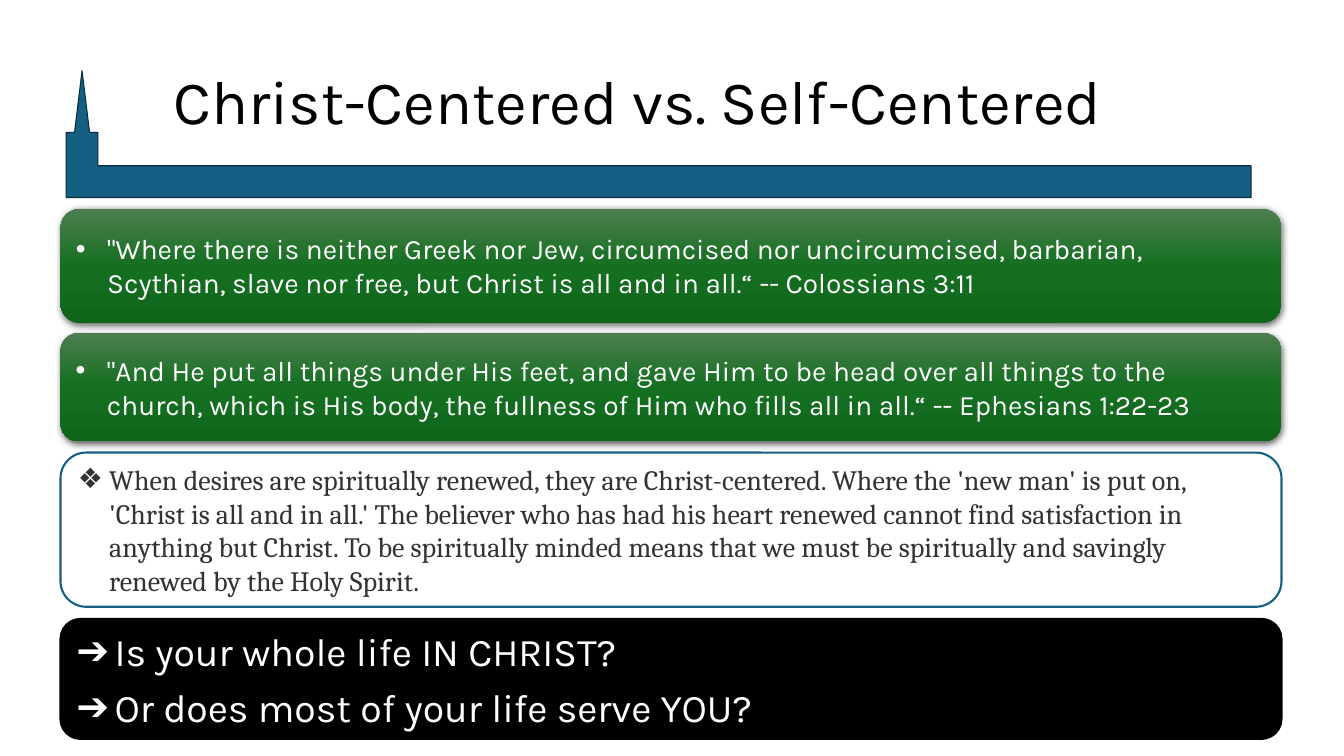
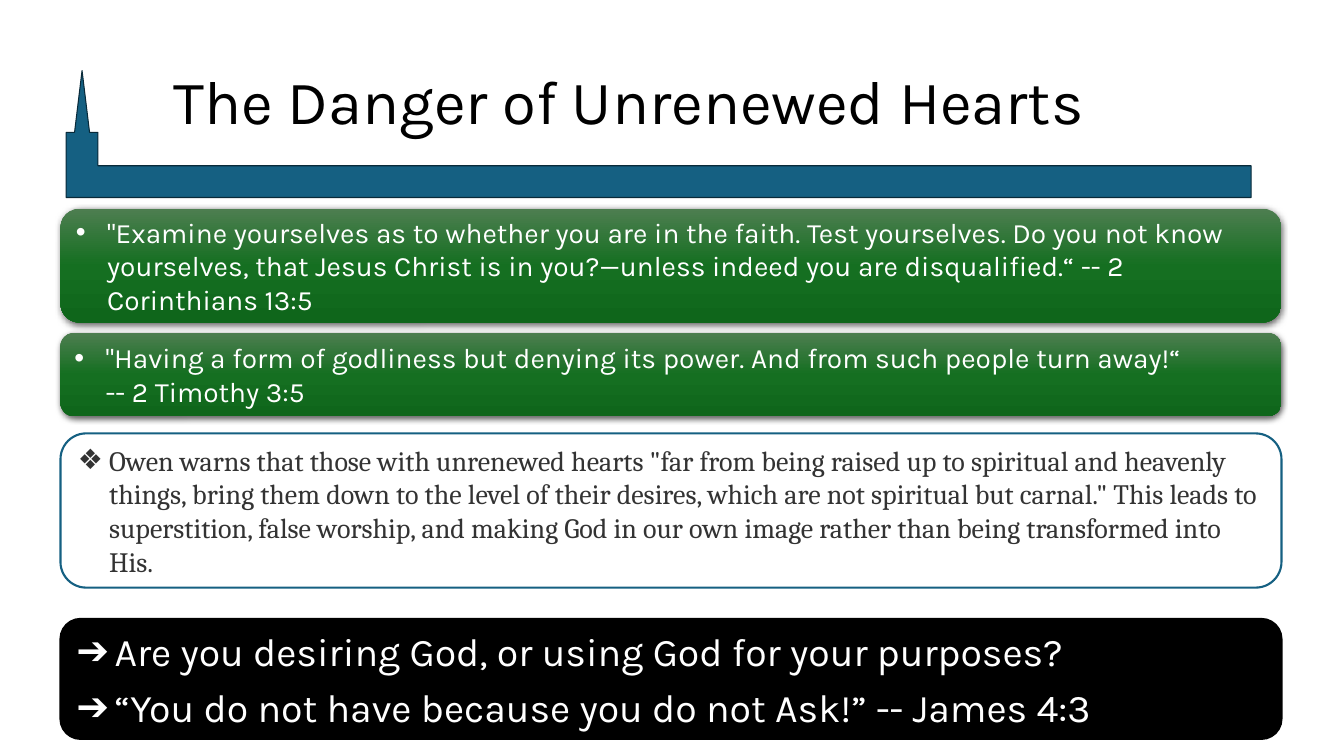
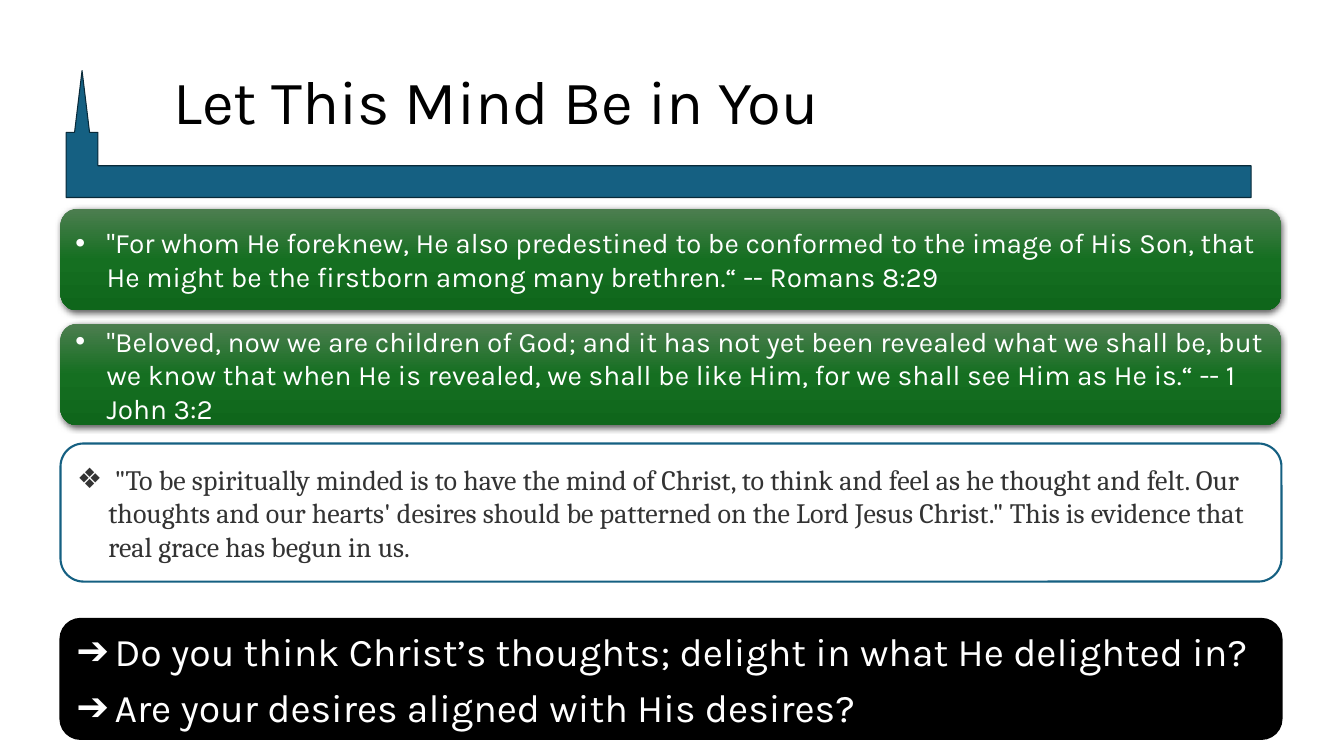
"""Build three slides on spiritual desires, each with verses, a comment and questions."""
from copy import deepcopy

from pptx import Presentation
from pptx.dml.color import RGBColor
from pptx.enum.shapes import MSO_SHAPE
from pptx.enum.text import MSO_ANCHOR, MSO_AUTO_SIZE, PP_ALIGN
from pptx.oxml.ns import qn
from pptx.util import Pt
from lxml.etree import SubElement

PX = 9144
BLUE, EDGE, BLACK, WHITE, GREY = "156082", "092A39", "000000", "FFFFFF", "333333"
GREEN = [(0, "4D7E50"), (0.5, "156F21"), (1, "0F661B")]
LEFT, WIDTH = 60, 1211

STYLES = {
    "verse": ("•", 31, "Karla", 20, WHITE, None, None),
    "note": ("❖", 31, "Cambria", 20, GREY, WHITE, BLUE),
    "ask": ("➔", 38, "Karla", 28, WHITE, BLACK, BLACK),
}

SLIDES = [
    ("Christ-Centered vs. Self-Centered", [
        ("verse", 207, 113, "\"Where there is neither Greek nor Jew, circumcised nor uncircumcised, barbarian, Scythian, slave nor free, but Christ is all and in all.“ -- Colossians 3:11"),
        ("verse", 330, 108, "\"And He put all things under His feet, and gave Him to be head over all things to the church, which is His body, the fullness of Him who fills all in all.“ -- Ephesians 1:22-23"),
        ("note", 449, 153, "When desires are spiritually renewed, they are Christ-centered. Where the 'new man' is put on, 'Christ is all and in all.' The believer who has had his heart renewed cannot find satisfaction in anything but Christ. To be spiritually minded means that we must be spiritually and savingly renewed by the Holy Spirit."),
        ("ask", 614, 119, "Is your whole life IN CHRIST?\nOr does most of your life serve YOU?"),
    ]),
    ("The Danger of Unrenewed Hearts", [
        ("verse", 207, 113, "\"Examine yourselves as to whether you are in the faith. Test yourselves. Do you not know yourselves, that Jesus Christ is in you?—unless indeed you are disqualified.“ -- 2 Corinthians 13:5"),
        ("verse", 330, 83, "\"Having a form of godliness but denying its power. And from such people turn away!“ \v-- 2 Timothy 3:5"),
        ("note", 430, 153, "Owen warns that those with unrenewed hearts \"far from being raised up to spiritual and heavenly things, bring them down to the level of their desires, which are not spiritual but carnal.\" This leads to superstition, false worship, and making God in our own image rather than being transformed into His."),
        ("ask", 614, 119, "Are you desiring God, or using God for your purposes?\n“You do not have because you do not Ask!” -- James 4:3"),
    ]),
    ("Let This Mind Be in You", [
        ("verse", 207, 101, "\"For whom He foreknew, He also predestined to be conformed to the image of His Son, that He might be the firstborn among many brethren.“ -- Romans 8:29"),
        ("verse", 321, 101, "\"Beloved, now we are children of God; and it has not yet been revealed what we shall be, but we know that when He is revealed, we shall be like Him, for we shall see Him as He is.“ -- 1 John 3:2"),
        ("note", 440, 137, " \"To be spiritually minded is to have the mind of Christ, to think and feel as he thought and felt. Our thoughts and our hearts' desires should be patterned on the Lord Jesus Christ.\" This is evidence that real grace has begun in us."),
        ("ask", 614, 119, "Do you think Christ’s thoughts; delight in what He delighted in?\nAre your desires aligned with His desires?"),
    ]),
]


def rgb(code):
    return RGBColor.from_string(code)


def shape(slide, kind, box, fill, edge, width):
    item = slide.shapes.add_shape(kind, *[n * PX for n in box])
    item.shadow.inherit = False
    if fill:
        item.fill.solid()
        item.fill.fore_color.rgb = rgb(fill)
        item.line.color.rgb = rgb(edge)
        item.line.width = Pt(width)
    else:
        item.line.fill.background()
        item.fill.gradient()
        props = item.element.spPr
        stops = props.find(".//" + qn("a:gsLst"))
        stops.append(deepcopy(stops[0]))
        for stop, (place, code) in zip(item.fill.gradient_stops, GREEN):
            stop.position = place
            stop.color.rgb = rgb(code)
        item.fill.gradient_angle = 270
        shade = SubElement(props.find(qn("a:effectLst")), qn("a:outerShdw"),
                           blurRad="57150", dist="19050", dir="5400000",
                           algn="ctr", rotWithShape="0")
        tint = SubElement(shade, qn("a:srgbClr"), val=BLACK)
        SubElement(tint, qn("a:alpha"), val="63000")
    return item


deck = Presentation()
deck.slide_width, deck.slide_height = 1333 * PX, 750 * PX
layout = deck.slide_layouts[5]

for index, (head, boxes) in enumerate(SLIDES):
    slide = deck.slides.add_slide(layout)
    if index == 0:
        spire = shape(slide, MSO_SHAPE.BENT_UP_ARROW, (74, 70, 1167, 126), BLUE, EDGE, 0.75)
        for spot, value in enumerate((0.25, 0.059, 0.487)):
            spire.adjustments[spot] = value
        spire.element.spPr.find(qn("a:xfrm")).set("flipH", "1")
        layout.shapes.element.append(spire.element)

    title = slide.shapes.title
    title.left, title.top, title.width, title.height = [n * PX for n in (162, 41, 1080, 126)]
    frame = title.text_frame
    frame.text = head
    frame.auto_size = MSO_AUTO_SIZE.NONE
    frame.vertical_anchor = MSO_ANCHOR.MIDDLE
    para = frame.paragraphs[0]
    para.alignment = PP_ALIGN.LEFT
    para.line_spacing = 0.9
    font = para.runs[0].font
    font.name, font.size = "Karla", Pt(44)
    font.color.rgb = rgb(BLACK)

    for style, top, height, text in boxes:
        mark, indent, face, size, ink, fill, edge = STYLES[style]
        panel = shape(slide, MSO_SHAPE.ROUNDED_RECTANGLE, (LEFT, top, WIDTH, height), fill, edge, 1.5)
        frame = panel.text_frame
        frame.text = text
        frame.word_wrap = True
        frame.vertical_anchor = MSO_ANCHOR.MIDDLE
        for row, para in enumerate(frame.paragraphs):
            para.alignment = PP_ALIGN.LEFT
            para.space_before = Pt(6 if row else 0)
            props = para._p.get_or_add_pPr()
            props.set("marL", str(indent * PX))
            props.set("indent", str(-indent * PX))
            SubElement(props, qn("a:buFont"), typeface="Arial")
            SubElement(props, qn("a:buChar"), char=mark)
            for run in para.runs:
                run.font.name, run.font.size = face, Pt(size)
                run.font.color.rgb = rgb(ink)

deck.save("out.pptx")
